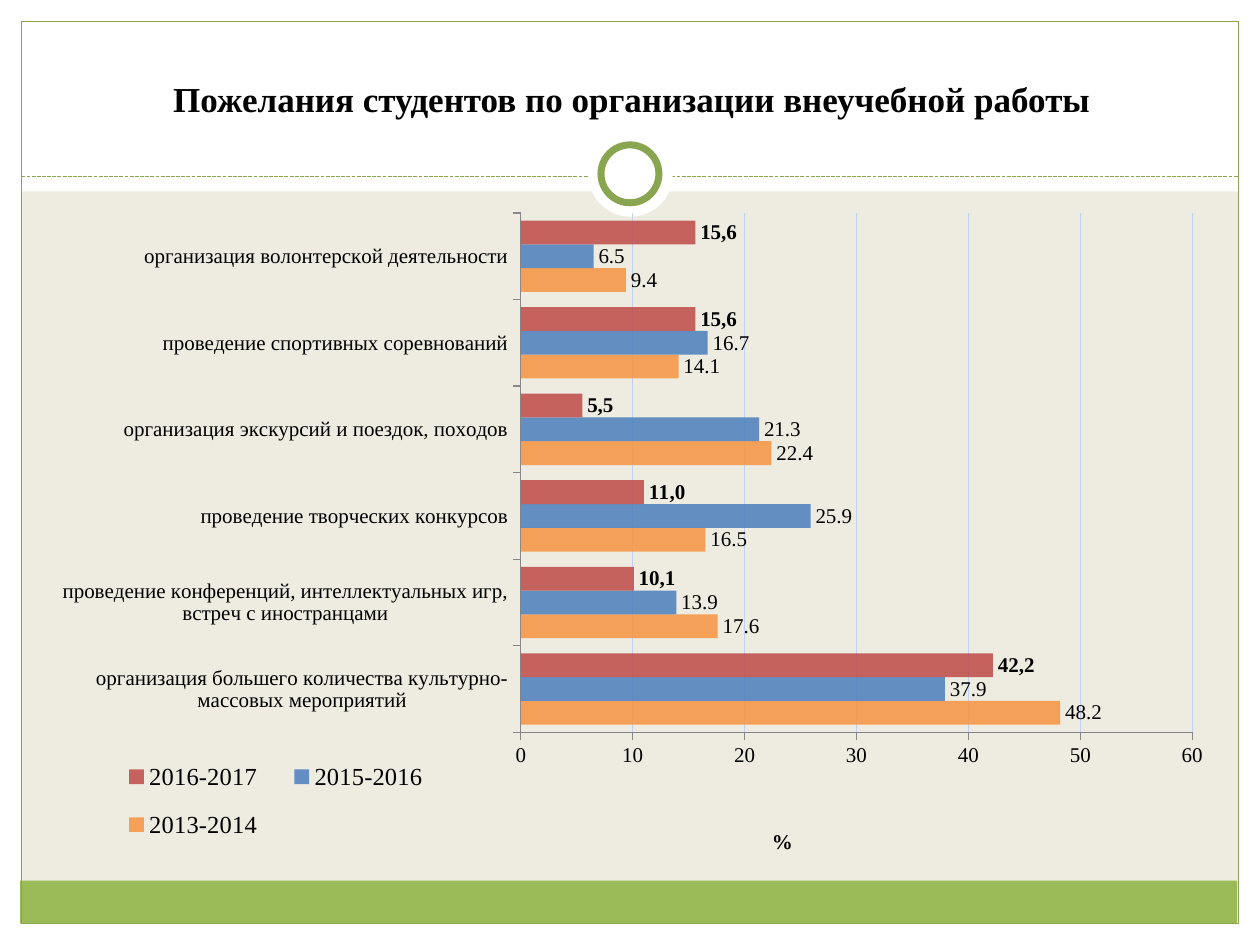
from dataclasses import dataclass
from typing import Optional

from lxml.etree import Element, SubElement
from pptx import Presentation
from pptx.chart.data import CategoryChartData
from pptx.dml.color import RGBColor
from pptx.enum.chart import XL_CHART_TYPE, XL_LABEL_POSITION, XL_LEGEND_POSITION, XL_TICK_MARK
from pptx.enum.dml import MSO_LINE
from pptx.enum.shapes import MSO_CONNECTOR, MSO_SHAPE
from pptx.enum.text import MSO_ANCHOR, PP_ALIGN
from pptx.oxml.ns import qn
from pptx.util import Inches, Pt


@dataclass(frozen=True)
class Theme:
    font: str = "Times New Roman"
    background: str = "EEECE1"
    white: str = "FFFFFF"
    band: str = "9BBB59"
    accent: str = "89A54F"
    text: str = "000000"
    grid: str = "C2D1ED"
    axis: str = "868686"
    bar_opacity: int = 88
    title_size: int = 20
    chart_size: int = 12
    legend_size: int = 14


@dataclass(frozen=True)
class Panel:
    left: float
    top: float
    width: float
    height: float
    fill: Optional[str] = None
    line_width: float = 0
    kind: MSO_SHAPE = MSO_SHAPE.RECTANGLE


@dataclass(frozen=True)
class Year:
    name: str
    values: tuple
    color: str
    bold_labels: bool = False


THEME = Theme()
FRAME = [
    Panel(0, 7.33, 10, 0.17, THEME.white),
    Panel(0, 0, 10, 1.52, THEME.white),
    Panel(0, 0, 0.17, 7.5, THEME.white),
    Panel(9.83, 0, 0.17, 7.5, THEME.white),
    Panel(0.16, 6.99, 9.66, 0.34, THEME.band),
    Panel(0.17, 0.17, 9.66, 7.16, line_width=0.75),
]
RINGS = [
    Panel(4.67, 1.05, 0.67, 0.67, THEME.white, kind=MSO_SHAPE.OVAL),
    Panel(4.77, 1.15, 0.46, 0.46, THEME.white, 4, MSO_SHAPE.OVAL),
]
WISHES = [
    "организация большего количества культурно-массовых мероприятий",
    "проведение конференций, интеллектуальных игр, встреч с иностранцами",
    "проведение творческих конкурсов",
    "организация экскурсий и поездок, походов",
    "проведение спортивных соревнований",
    "организация волонтерской деятельности",
]
YEARS = [
    Year("2013-2014", (48.2, 17.6, 16.5, 22.4, 14.1, 9.4), "F79646"),
    Year("2015-2016", (37.9, 13.9, 25.9, 21.3, 16.7, 6.5), "4F81BD"),
    Year("2016-2017", (42.2, 10.1, 11, 5.5, 15.6, 15.6), "C0504D", True),
]


def rgb(value: str) -> RGBColor:
    return RGBColor.from_string(value)


def style_font(font, size: int, bold: bool = False) -> None:
    font.name = THEME.font
    font.size = Pt(size)
    font.bold = bold
    font.color.rgb = rgb(THEME.text)


def style_line(line, color: str, width: float = 0.75) -> None:
    line.color.rgb = rgb(color)
    line.width = Pt(width)


def draw_panel(slide, panel: Panel) -> None:
    shape = slide.shapes.add_shape(
        panel.kind, Inches(panel.left), Inches(panel.top), Inches(panel.width), Inches(panel.height)
    )
    shape.shadow.inherit = False
    if panel.fill:
        shape.fill.solid()
        shape.fill.fore_color.rgb = rgb(panel.fill)
    else:
        shape.fill.background()
    if panel.line_width:
        style_line(shape.line, THEME.accent, panel.line_width)
    else:
        shape.line.fill.background()


def draw_divider(slide) -> None:
    divider = slide.shapes.add_connector(
        MSO_CONNECTOR.STRAIGHT, Inches(0.17), Inches(1.4), Inches(9.83), Inches(1.4)
    )
    style_line(divider.line, THEME.accent)
    divider.line.dash_style = MSO_LINE.SQUARE_DOT
    SubElement(divider._element.spPr, qn("a:effectLst"))


def draw_title(slide, text: str) -> None:
    box = slide.shapes.add_textbox(Inches(0.35), Inches(0.44), Inches(9.33), Inches(0.56))
    frame = box.text_frame
    frame.word_wrap = True
    frame.vertical_anchor = MSO_ANCHOR.BOTTOM
    frame.text = text
    para = frame.paragraphs[0]
    para.alignment = PP_ALIGN.CENTER
    style_font(para.runs[0].font, THEME.title_size, bold=True)


def place(parent, index: int, **fractions: float) -> None:
    """Give a chart part a manual layout in fractions of the chart."""
    for old in parent.findall(qn("c:layout")):
        parent.remove(old)
    layout = Element(qn("c:layout"))
    manual = SubElement(layout, qn("c:manualLayout"))
    if parent.tag == qn("c:plotArea"):
        SubElement(manual, qn("c:layoutTarget")).set("val", "inner")
    for mode in ("xMode", "yMode"):
        SubElement(manual, qn(f"c:{mode}")).set("val", "edge")
    for name, value in fractions.items():
        SubElement(manual, qn(f"c:{name}")).set("val", str(value))
    parent.insert(index, layout)


def style_series(series, year: Year) -> None:
    series.format.fill.solid()
    series.format.fill.fore_color.rgb = rgb(year.color)
    color = next(series._element.iter(qn("a:srgbClr")))
    SubElement(color, qn("a:alpha")).set("val", str(THEME.bar_opacity * 1000))
    labels = series.data_labels
    labels.show_value = True
    labels.number_format = "###0.0"
    labels.number_format_is_linked = False
    labels.position = XL_LABEL_POSITION.OUTSIDE_END
    style_font(labels.font, THEME.chart_size)
    if year.bold_labels:
        for index, value in enumerate(year.values):
            label = series.points[index].data_label
            label.text_frame.text = f"{value:.1f}".replace(".", ",")
            style_font(label.text_frame.paragraphs[0].runs[0].font, THEME.chart_size, bold=True)
            label.position = XL_LABEL_POSITION.OUTSIDE_END


def style_axes(chart) -> None:
    for axis in (chart.category_axis, chart.value_axis):
        axis.major_tick_mark = XL_TICK_MARK.OUTSIDE
        style_line(axis.format.line, THEME.axis)
        style_font(axis.tick_labels.font, THEME.chart_size)
    axis = chart.value_axis
    axis.minimum_scale, axis.maximum_scale, axis.major_unit = 0, 60, 10
    axis.tick_labels.number_format = "#,##0"
    axis.tick_labels.number_format_is_linked = False
    axis.has_major_gridlines = True
    style_line(axis.major_gridlines.format.line, THEME.grid)
    title = axis.axis_title
    title.text_frame.text = "%"
    style_font(title.text_frame.paragraphs[0].runs[0].font, THEME.chart_size, bold=True)
    place(title._element, 1, x=0.62, y=0.92)


def draw_chart(slide) -> None:
    data = CategoryChartData(number_format="###0.0")
    data.categories = WISHES
    for year in YEARS:
        data.add_series(year.name, year.values)
    chart = slide.shapes.add_chart(
        XL_CHART_TYPE.BAR_CLUSTERED, Inches(0.33), Inches(1.55), Inches(9.3), Inches(5.43), data
    ).chart
    style_font(chart.font, THEME.chart_size)
    chart.has_title = False
    plot = chart.plots[0]
    plot.gap_width = 64
    plot.vary_by_categories = False
    for series, year in zip(plot.series, YEARS):
        series.invert_if_negative = False
        style_series(series, year)
    style_axes(chart)
    place(chart._chartSpace.chart.plotArea, 0, x=0.409, y=0.026, w=0.573, h=0.759)
    chart.has_legend = True
    chart.legend.position = XL_LEGEND_POSITION.RIGHT
    chart.legend.include_in_layout = False
    style_font(chart.legend.font, THEME.legend_size)
    place(chart.legend._element, 1, x=0.05, y=0.8, w=0.3, h=0.17)


def main() -> None:
    deck = Presentation()
    deck.slide_width, deck.slide_height = Inches(10), Inches(7.5)
    slide = deck.slides.add_slide(deck.slide_layouts[6])
    slide.background.fill.solid()
    slide.background.fill.fore_color.rgb = rgb(THEME.background)
    for panel in FRAME:
        draw_panel(slide, panel)
    draw_divider(slide)
    for ring in RINGS:
        draw_panel(slide, ring)
    draw_title(slide, "Пожелания студентов по организации внеучебной работы")
    draw_chart(slide)
    deck.save("out.pptx")


if __name__ == "__main__":
    main()
